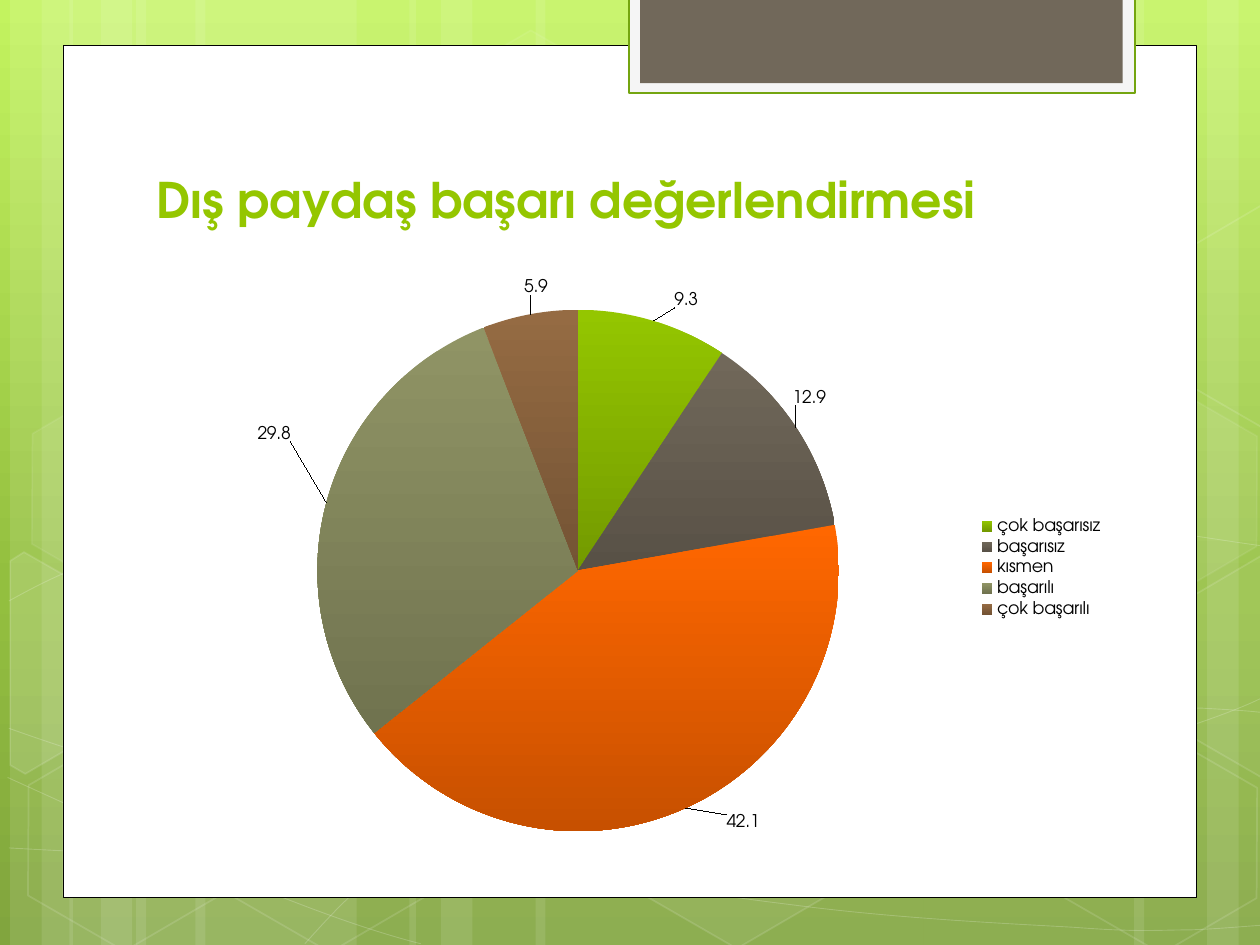
import math
from copy import deepcopy
from dataclasses import dataclass

from lxml import etree
from pptx import Presentation
from pptx import util as u
from pptx.chart import data
from pptx.dml.color import RGBColor
from pptx.enum import chart as ch, shapes, text
from pptx.oxml import parse_xml
from pptx.oxml.ns import nsdecls, qn


@dataclass
class Theme:
    font: str = "TeX Gyre Adventor"
    head: int = 28
    small: int = 10
    white: str = "FFFFFF"
    black: str = "000000"
    pale: str = "F5F5F5"
    edge: str = "74A510"
    lime: str = "94C600"
    taupe: str = "71685A"
    back: tuple = ((0, "C3F35F"), (0.62, "93BF3F"), (1, "81A53E"))
    pie: tuple = ("94C600", "71685A", "FF6700", "909465", "956B43")
    shade: float = 0.78


def box(area):
    return [u.Inches(n) for n in area]


def dark(tone, part):
    return "".join(f"{round(b * part):02X}" for b in RGBColor.from_string(tone))


def spin(pts, mid, angle):
    cos, sin = math.cos(math.radians(angle)), math.sin(math.radians(angle))
    moved = [(x - mid[0], y - mid[1]) for x, y in pts]
    return [(mid[0] + x * cos - y * sin, mid[1] + x * sin + y * cos) for x, y in moved]


class Deck:
    """Hold the theme and the current slide, and draw each kind of element."""

    def __init__(self, theme):
        self.theme = theme
        self.prs = Presentation()
        self.prs.slide_width, self.prs.slide_height = u.Inches(10), u.Inches(7.5)
        self.slide = self.prs.slides.add_slide(self.prs.slide_layouts[5])

    def ground(self):
        fill = self.slide.background.fill
        fill.gradient()
        fill.gradient_angle = 270
        stops = self.slide.element.xpath(".//p:bgPr//a:gsLst")[0]
        stops.append(deepcopy(stops[-1]))
        for stop, (pos, tone) in zip(fill.gradient_stops, self.theme.back):
            stop.position = pos
            stop.color.rgb = RGBColor.from_string(tone)

    def paint(self, shape, fill=None, line=None, width=1, glow=100, haze=100):
        shape.shadow.inherit = False
        if fill:
            shape.fill.solid()
            shape.fill.fore_color.rgb = RGBColor.from_string(fill)
        else:
            shape.fill.background()
        if line:
            shape.line.color.rgb = RGBColor.from_string(line)
            shape.line.width = u.Pt(width)
        else:
            shape.line.fill.background()
        for where, alpha in (("", glow), ("a:ln/", haze)):
            for tone in shape.element.xpath(f"./p:spPr/{where}a:solidFill/a:srgbClr"):
                if alpha < 100:
                    etree.SubElement(tone, qn("a:alpha"), val=str(alpha * 1000))

    def rect(self, area, turn=0, **look):
        kind = shapes.MSO_SHAPE.RECTANGLE
        shape = self.slide.shapes.add_shape(kind, *box(area))
        shape.rotation = turn
        self.paint(shape, **look)

    def hexa(self, left, top, glow, haze):
        kind = shapes.MSO_SHAPE.HEXAGON
        shape = self.slide.shapes.add_shape(kind, *box((left, top, 1.75, 1.52)))
        shape.adjustments[0] = 0.285
        shape.rotation = 30
        white = self.theme.white
        self.paint(shape, white if glow else None, white, glow=glow, haze=haze)

    def free(self, pts, close=False, **look):
        pts = [box(p) for p in pts]
        pen = self.slide.shapes.build_freeform(*pts[0])
        pen.add_line_segments(pts[1:], close=close)
        shape = pen.convert_to_shape()
        self.paint(shape, line=self.theme.white, **look)
        return shape

    def shard(self, pts, mid, **look):
        self.free(spin(pts, mid, -30), True, **look).rotation = 30

    def wave(self, start, *curves):
        pts = [start] + [c[i:i + 2] for c in curves for i in (0, 2, 4)]
        shape = self.free(pts, width=0.5, haze=20)
        legs = shape.element.xpath(".//a:lnTo")
        for i in range(0, len(legs), 3):
            arc = etree.Element(qn("a:cubicBezTo"))
            legs[i].addprevious(arc)
            for leg in legs[i:i + 3]:
                arc.append(leg[0])
                leg.getparent().remove(leg)

    def title(self, words, area):
        shape = self.slide.shapes.title
        shape.left, shape.top, shape.width, shape.height = box(area)
        self.slide.shapes.element.append(shape.element)
        frame = shape.text_frame
        frame.auto_size = text.MSO_AUTO_SIZE.NONE
        frame.vertical_anchor = text.MSO_ANCHOR.BOTTOM
        para = frame.paragraphs[0]
        para.alignment = text.PP_ALIGN.LEFT
        run = para.add_run()
        run.text = words
        run.font.name, run.font.size, run.font.bold = self.theme.font, u.Pt(self.theme.head), True
        run.font.color.rgb = RGBColor.from_string(self.theme.lime)

    def place(self, node, spot, **spans):
        for old in node.findall(qn("c:layout")):
            node.remove(old)
        body = "".join(f'<c:{k} val="{v}"/>' for k, v in spans.items())
        node.insert(spot, parse_xml(
            f'<c:layout {nsdecls("c")}><c:manualLayout>{body}</c:manualLayout></c:layout>'))

    def pie(self, area, rows, shifts):
        info = data.CategoryChartData(number_format="0.0")
        info.categories = [name for name, _ in rows]
        info.add_series("Series 1", [val for _, val in rows])
        chart = self.slide.shapes.add_chart(ch.XL_CHART_TYPE.PIE, *box(area), info).chart
        chart.has_title = False
        chart.font.name, chart.font.size = self.theme.font, u.Pt(self.theme.small)
        chart.font.color.rgb = RGBColor.from_string(self.theme.black)
        chart.has_legend = True
        chart.legend.position = ch.XL_LEGEND_POSITION.RIGHT
        chart.legend.include_in_layout = False
        series = chart.plots[0].series[0]
        labels = series.data_labels
        labels.show_value = True
        labels.number_format, labels.number_format_is_linked = "0.0", False
        for i, tone in enumerate(self.theme.pie):
            point = series.points[i]
            fill = point.format.fill
            fill.gradient()
            fill.gradient_angle = 270
            for stop, shade in zip(fill.gradient_stops, (1, self.theme.shade)):
                stop.color.rgb = RGBColor.from_string(dark(tone, shade))
            point.format.line.fill.background()
            point.data_label.position = ch.XL_LABEL_POSITION.OUTSIDE_END
        for node, (x, y) in zip(chart.element.xpath(".//c:dLbl"), shifts):
            self.place(node, 1, x=x, y=y)
        self.place(chart.element.xpath(".//c:plotArea")[0], 0, layoutTarget="inner",
                   xMode="edge", yMode="edge", x=0.16, y=0.06, w=0.55, h=0.89)


BANDS = [(1.08, 1.75, 0), (0.08, 0.5, 0), (0.33, 0.83, 0), (1.55, 1.75, 0), (0.55, 0.5, 0),
         (0.8, 0.83, 0), (7.33, 1.75, 180), (9.58, 0.5, 180), (9, 0.83, 180),
         (4.25, 3.08, 0), (3.25, 0.5, 0), (3.5, 0.83, 0)]
WAVES = [
    ((0.07, 6.73), (0.61, 6.76, 1.15, 6.79, 1.9, 6.78), (2.65, 6.77, 3.58, 6.75, 4.58, 6.65),
     (5.58, 6.55, 7, 6.36, 7.92, 6.17), (8.83, 5.98, 9.77, 5.68, 10.07, 5.51)),
    ((0.07, 4.77), (0.36, 4.61, 0.65, 4.46, 1.21, 4.31), (1.78, 4.16, 2.59, 3.94, 3.47, 3.87),
     (4.36, 3.8, 5.44, 3.79, 6.54, 3.87), (7.64, 3.95, 9.47, 4.26, 10.07, 4.34)),
    ((0.06, 6.17), (1.27, 6.72, 2.47, 7.27, 3.34, 7.49)),
    ((0.07, 5.78), (0.38, 5.89, 0.7, 6, 1.28, 6.16), (1.86, 6.31, 2.73, 6.56, 3.57, 6.73),
     (4.4, 6.9, 5.45, 7.08, 6.28, 7.18), (7.11, 7.29, 8, 7.33, 8.53, 7.36),
     (9.05, 7.4, 9.19, 7.38, 9.45, 7.38), (9.71, 7.37, 9.89, 7.35, 10.07, 7.34)),
    ((2.42, 7.49), (2.6, 7.29, 2.78, 7.09, 3.02, 6.91), (3.26, 6.73, 3.6, 6.53, 3.88, 6.39),
     (4.16, 6.25, 4.33, 6.19, 4.7, 6.09), (5.06, 5.99, 5.73, 5.85, 6.08, 5.78),
     (6.44, 5.71, 6.49, 5.71, 6.8, 5.69), (7.11, 5.66, 7.6, 5.63, 7.94, 5.62),
     (8.29, 5.61, 8.86, 5.62, 8.86, 5.62), (9.08, 5.62, 9.31, 5.62, 9.53, 5.62),
     (9.71, 5.63, 9.88, 5.64, 9.97, 5.65), (10.06, 5.66, 10.03, 5.65, 10.06, 5.66)),
]
CELLS = [(3.34, 0.36, 4, 8), (4.97, 5.89, 6, 12), (0.11, 5.91, 0, 12), (0.14, 3.12, 7, 8),
         (1.74, 5.92, 0, 12), (8.34, 5.93, 0, 12), (8.34, 3.14, 7, 8)]
LEFT = [(0.08, 4.45), (0.19, 4.38), (0.96, 4.82), (0.95, 5.7), (0.2, 6.14), (0.08, 6.07)]
RIGHT = [(9.26, 0.41), (10.01, -0.03), (10.09, 0.02), (10.09, 1.69), (10.02, 1.73), (9.26, 1.29)]
ROWS = [("çok başarısız", 9.3), ("başarısız", 12.9), ("kısmen", 42.1),
        ("başarılı", 29.8), ("çok başarılı", 5.9)]
SHIFTS = [(0.02, -0.01), (-0.01, -0.03), (0.04, 0), (-0.03, -0.1), (0.02, -0.02)]


def main():
    look = Theme()
    deck = Deck(look)
    deck.ground()
    for left, width, turn in BANDS:
        deck.rect((left, 0, width, 7.5), turn, fill=look.white, glow=10)
    for wave in WAVES:
        deck.wave(*wave)
    for cell in CELLS:
        deck.hexa(*cell)
    deck.shard(LEFT, (0.36, 5.35), fill=look.white, glow=10, haze=12)
    for top, fill in ((4.44, look.white), (1.66, None)):
        pts = [(x, top + y) for x, y in RIGHT]
        deck.shard(pts, (9.85, top + 0.76), fill=fill, glow=4, haze=12)
    deck.rect((0.5, 0.36, 9, 6.76), fill=look.white, line=look.black, width=0.5)
    deck.rect((4.99, -0.02, 4.02, 0.76), fill=look.pale, line=look.edge, width=1.25)
    deck.rect((5.08, -0.02, 3.83, 0.68), fill=look.taupe)
    deck.title("Dış paydaş başarı değerlendirmesi", (1.14, 1.12, 7.68, 0.74))
    deck.pie((1.3, 2.18, 7.56, 4.65), ROWS, SHIFTS)
    deck.prs.save("out.pptx")


if __name__ == "__main__":
    main()
